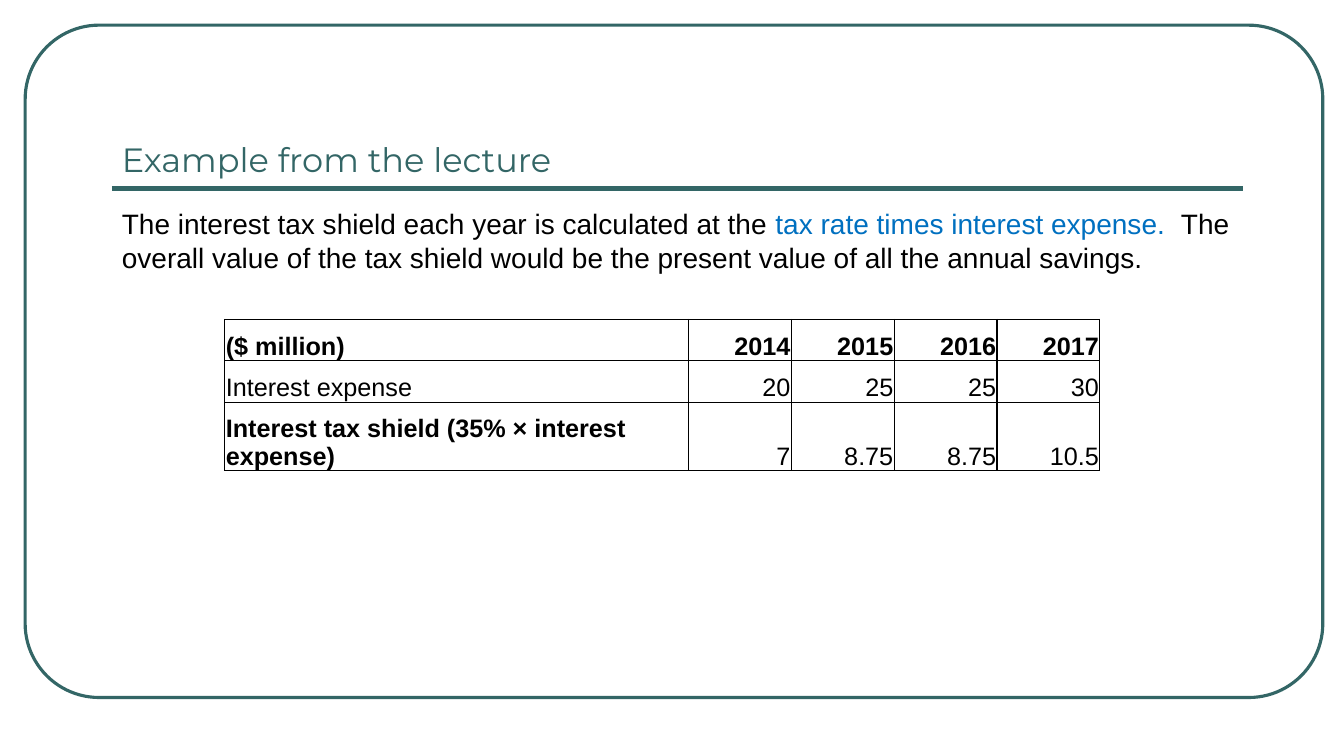
from dataclasses import dataclass
from lxml.etree import SubElement
from pptx import Presentation
from pptx.dml.color import RGBColor
from pptx.enum.shapes import MSO_CONNECTOR, MSO_SHAPE
from pptx.enum.text import MSO_ANCHOR, PP_ALIGN
from pptx.oxml.ns import qn
from pptx.util import Inches, Pt

# Content
TITLE = "Example from the lecture"
BODY = [
    ("The interest tax shield each year is calculated at the ", False),
    ("tax rate times interest expense.  ", True),
    ("The overall value of the tax shield would be the present value of all the annual savings.", False),
]
# Each row: label, label is bold, values are bold, values
ROWS = [
    ("($ million)", True, True, ["2014", "2015", "2016", "2017"]),
    ("Interest expense", False, False, ["20", "25", "25", "30"]),
    ("Interest tax shield (35% × interest expense)", True, False, ["7", "8.75", "8.75", "10.5"]),
]
ROW_HEIGHTS = [0.41, 0.41, 0.68]
LABEL_WIDTH, YEAR_WIDTH = 4.6, 1.02


@dataclass(frozen=True)
class Theme:
    teal: RGBColor = RGBColor(0x33, 0x66, 0x66)
    black: RGBColor = RGBColor(0, 0, 0)
    blue: RGBColor = RGBColor(0x00, 0x70, 0xC0)
    title_font: str = "Montserrat"
    body_font: str = "Arial"
    title_size: int = 24
    body_size: int = 20
    table_size: int = 18


T = Theme()
LEFT, WIDTH = 1.11, 11.22


def set_font(font, name, size, color=None, bold=False):
    font.name, font.size, font.bold = name, Pt(size), bold
    if color is not None:
        font.color.rgb = color


def add_text_box(s, top, height, anchor):
    tf = s.shapes.add_textbox(Inches(LEFT), Inches(top), Inches(WIDTH), Inches(height)).text_frame
    tf.word_wrap = True
    tf.vertical_anchor = anchor
    return tf.paragraphs[0]


def add_borders(cell):
    tcPr = cell._tc.get_or_add_tcPr()
    for i, side in enumerate(("lnL", "lnR", "lnT", "lnB")):
        ln = SubElement(tcPr, qn("a:" + side), w=str(Pt(1)))
        fill = SubElement(ln, qn("a:solidFill"))
        SubElement(fill, qn("a:srgbClr"), val=str(T.black))
        tcPr.insert(i, ln)  # borders precede the fill


def fill_cell(cell, text, bold, align):
    cell.fill.background()
    cell.margin_left = cell.margin_right = cell.margin_top = Inches(0.01)
    cell.margin_bottom = 0
    cell.vertical_anchor = MSO_ANCHOR.BOTTOM
    p = cell.text_frame.paragraphs[0]
    p.text, p.alignment = text, align
    set_font(p.font, T.body_font, T.table_size, T.black, bold)
    add_borders(cell)


def main():
    prs = Presentation()
    prs.slide_width, prs.slide_height = Inches(13.33), Inches(7.5)
    s = prs.slides.add_slide(prs.slide_layouts[6])

    # Rounded frame
    frame = s.shapes.add_shape(MSO_SHAPE.ROUNDED_RECTANGLE, Inches(0.25), Inches(0.25),
                               Inches(12.87), Inches(6.67))
    frame.adjustments[0] = 0.11
    frame.shadow.inherit = False
    frame.fill.background()
    frame.line.color.rgb, frame.line.width = T.teal, Pt(2.25)

    # Title and its rule
    rule = s.shapes.add_connector(MSO_CONNECTOR.STRAIGHT, Inches(LEFT), Inches(1.87),
                                  Inches(LEFT + WIDTH), Inches(1.87))
    rule.line.color.rgb, rule.line.width = T.teal, Pt(3)
    SubElement(rule._element.spPr, qn("a:effectLst"))
    p = add_text_box(s, 0.58, 1.25, MSO_ANCHOR.BOTTOM)
    p.text = TITLE
    set_font(p.font, T.title_font, T.title_size, T.teal)

    # Table
    n_years = len(ROWS[0][3])
    table = s.shapes.add_table(len(ROWS), n_years + 1, Inches(2.23), Inches(3.17),
                               Inches(LABEL_WIDTH + n_years * YEAR_WIDTH),
                               Inches(sum(ROW_HEIGHTS))).table
    for col, width in zip(table.columns, [LABEL_WIDTH] + [YEAR_WIDTH] * n_years):
        col.width = Inches(width)
    for i, (label, label_bold, values_bold, values) in enumerate(ROWS):
        table.rows[i].height = Inches(ROW_HEIGHTS[i])
        fill_cell(table.cell(i, 0), label, label_bold, PP_ALIGN.LEFT)
        for j, value in enumerate(values, 1):
            fill_cell(table.cell(i, j), value, values_bold, PP_ALIGN.RIGHT)

    # Explanation
    p = add_text_box(s, 2, 2.33, MSO_ANCHOR.TOP)
    set_font(p.font, T.body_font, T.body_size)
    for text, highlighted in BODY:
        r = p.add_run()
        r.text = text
        r.font.color.rgb = T.blue if highlighted else T.black

    prs.save("out.pptx")


if __name__ == "__main__":
    main()
